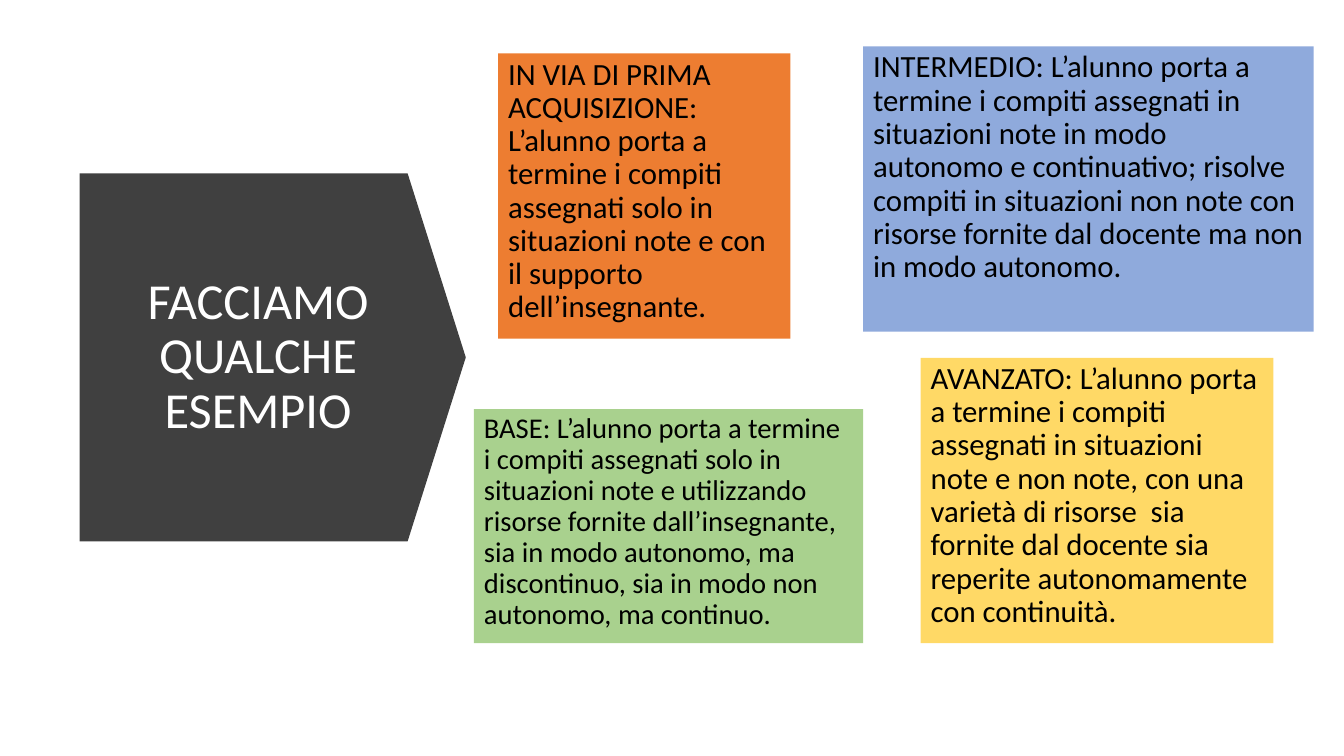
from pptx import Presentation
from pptx.dml.color import RGBColor
from pptx.enum.shapes import MSO_SHAPE as SHAPE
from pptx.enum.text import MSO_ANCHOR as ANCHOR, MSO_AUTO_SIZE as AUTO, PP_ALIGN as ALIGN
from pptx.oxml.ns import qn
from pptx.util import Inches, Pt

FONT = "Calibri"
COLORS = {"arrow": "404040", "title": "FFFFFF", "text": "000000", "first": "ED7D31",
          "base": "A9D18E", "mid": "8FAADC", "advanced": "FFD966"}

# Level: colour, box (left, top, width, height), text size, wording
LEVELS = [
    ("first", (4.94, 0.53, 2.9, 2.83), 22,
     "IN VIA DI PRIMA ACQUISIZIONE: L’alunno porta a termine i compiti assegnati "
     "solo in situazioni note e con il supporto dell’insegnante."),
    ("base", (4.7, 4.06, 3.86, 2.32), 20.4,
     "BASE: L’alunno porta a termine i compiti assegnati solo in situazioni note e "
     "utilizzando risorse fornite dall’insegnante, sia in modo autonomo, ma "
     "discontinuo, sia in modo non autonomo, ma continuo."),
    ("mid", (8.56, 0.46, 4.47, 2.83), 22,
     "INTERMEDIO: L’alunno porta a termine i compiti assegnati in situazioni note in "
     "modo autonomo e continuativo; risolve compiti in situazioni non note con "
     "risorse fornite dal docente ma non in modo autonomo."),
    ("advanced", (9.13, 3.55, 3.5, 2.83), 22,
     "AVANZATO: L’alunno porta a termine i compiti assegnati in situazioni note e non "
     "note, con una varietà di risorse  sia fornite dal docente sia reperite "
     "autonomamente con continuità."),
]


def color(name):
    return RGBColor.from_string(COLORS[name])


def place(sp, box):
    sp.left, sp.top, sp.width, sp.height = (Inches(v) for v in box)


def write(sp, text, size, color_name, align, anchor, after=0):
    tf = sp.text_frame
    tf.word_wrap = True
    tf.auto_size = AUTO.NONE
    tf.vertical_anchor = anchor
    p = tf.paragraphs[0]
    p.alignment = align
    p.line_spacing = 0.9
    p.space_before = Pt(0)
    p.space_after = Pt(after)
    r = p.add_run()
    r.text = text
    r.font.name = FONT
    r.font.size = Pt(size)
    r.font.bold = False
    r.font.color.rgb = color(color_name)
    return p


def add_title_arrow(slide, box):
    """Arrow pointing right, with the title over it."""
    left, top, width, height = box
    sp = slide.shapes.add_shape(SHAPE.DOWN_ARROW, *(Inches(v) for v in box))
    sp.rotation = 270
    sp.adjustments[0] = 1
    sp.adjustments[1] = 0.158
    sp.shadow.inherit = False
    sp.fill.solid()
    sp.fill.fore_color.rgb = color("arrow")
    sp.line.fill.background()
    # Send the arrow behind the title
    slide.shapes.title._element.addprevious(sp._element)

    title = slide.shapes.title
    place(title, (left + 0.24, top + 0.52, width - 0.77, height - 1.04))
    write(title, "FACCIAMO QUALCHE ESEMPIO", 36, "title", ALIGN.CENTER, ANCHOR.MIDDLE)


def add_level(sp, fill, box, size, text):
    """Coloured box describing one level, without a bullet."""
    place(sp, box)
    sp.fill.solid()
    sp.fill.fore_color.rgb = color(fill)
    p = write(sp, text, size, "text", ALIGN.LEFT, ANCHOR.TOP, after=6)
    pPr = p._p.get_or_add_pPr()
    pPr.set("marL", "0")
    pPr.set("indent", "0")
    pPr.append(pPr.makeelement(qn("a:buNone"), {}))


def main():
    prs = Presentation()
    prs.slide_width, prs.slide_height = Inches(13.33), Inches(7.5)
    # Comparison layout: a title and four bodies
    slide = prs.slides.add_slide(prs.slide_layouts[4])
    add_title_arrow(slide, (0.88, 1.63, 3.65, 3.83))
    bodies = [sp for sp in slide.placeholders if sp.placeholder_format.idx > 0]
    for sp, level in zip(bodies, LEVELS):
        add_level(sp, *level)
    prs.save("out.pptx")


if __name__ == "__main__":
    main()
